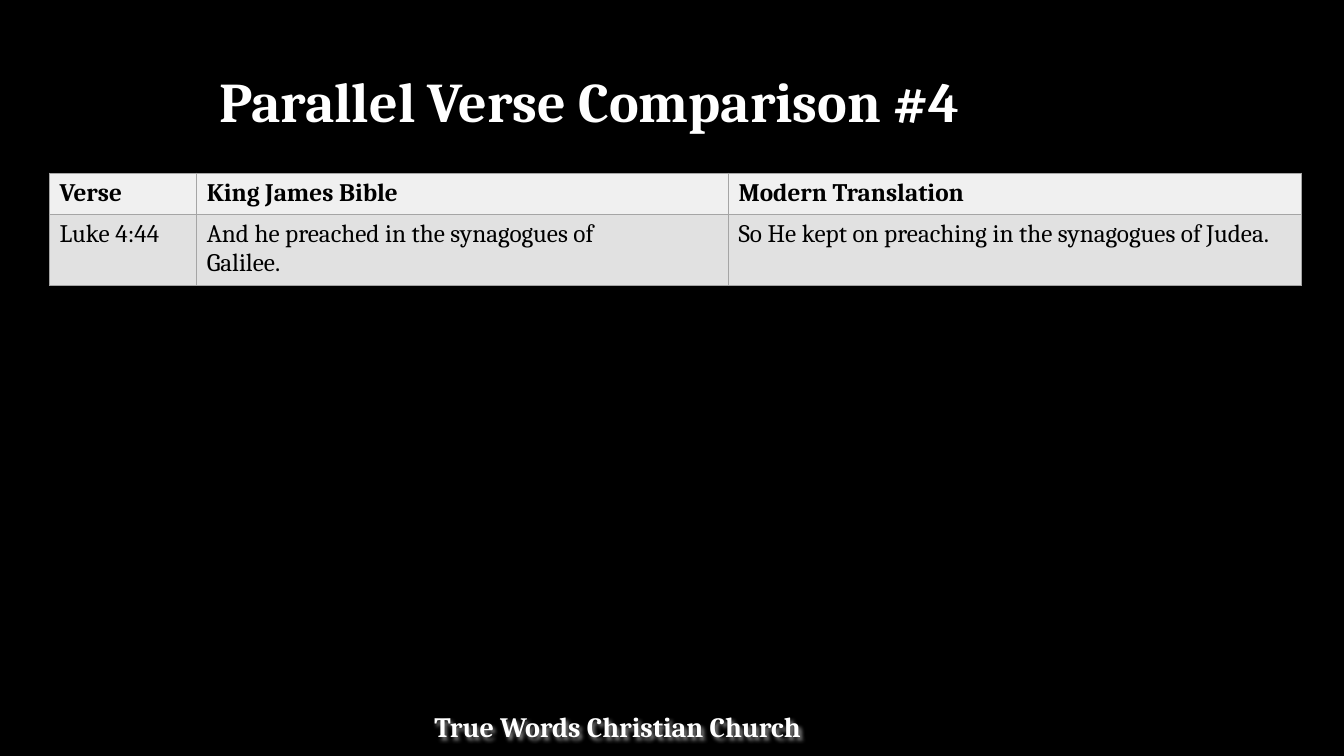
from lxml import etree
from pptx import Presentation
from pptx.dml.color import RGBColor
from pptx.oxml import parse_xml
from pptx.oxml.ns import nsdecls, qn
from pptx.util import Inches, Pt

FONT = "Cambria"
WIDTH, HEIGHT = Inches(13.33), Inches(7.5)
COLUMN_SHARES = (11.76, 42.47, 45.77)
ROW_SHARES = (37, 63)
ROW_FILLS = ("F0F0F0", "E1E1E1")
VERSES = (
    ("Verse", "King James Bible", "Modern Translation"),
    ("Luke 4:44", "And he preached in the synagogues of\nGalilee.",
     "So He kept on preaching in the synagogues of Judea."),
)


def color(hex_code):
    """Turn a hex string into a colour."""
    return RGBColor.from_string(hex_code)


def place(left, top, width, height):
    """Turn percentages of the slide into a box."""
    return (int(WIDTH * left / 100), int(HEIGHT * top / 100),
            int(WIDTH * width / 100), int(HEIGHT * height / 100))


def style(p, size, hex_code, bold):
    """Set the font of a paragraph."""
    font = p.font
    font.name, font.size, font.bold = FONT, Pt(size), bold
    font.color.rgb = color(hex_code)


def add_heading(s, box, text, size):
    """Add one line of bold white text."""
    sp = s.shapes.add_textbox(*box)
    tf = sp.text_frame
    tf.word_wrap = True
    tf.text = text
    style(tf.paragraphs[0], size, "FFFFFF", True)
    return sp


def add_footer(s, box, text):
    """Add the church name with a soft grey shadow."""
    sp = add_heading(s, box, text, 20)
    sp._element.spPr.append(parse_xml(
        f'<a:effectLst {nsdecls("a")}><a:outerShdw blurRad="38100" dist="25400" '
        'dir="2700000" algn="tl"><a:srgbClr val="808080"/></a:outerShdw></a:effectLst>'))


def add_borders(cell, hex_code):
    """Draw a thin line on all four sides of a cell."""
    tc_pr = cell._tc.get_or_add_tcPr()
    for side in "LRTB":
        ln = etree.SubElement(tc_pr, qn(f"a:ln{side}"), w=str(Pt(1)))
        fill = etree.SubElement(ln, qn("a:solidFill"))
        etree.SubElement(fill, qn("a:srgbClr"), val=hex_code)


def add_verse_table(s, box):
    """Add the table of verses, with a bold header row."""
    width, height = box[2:]
    table = s.shapes.add_table(len(VERSES), len(COLUMN_SHARES), *box).table
    for column, share in zip(table.columns, COLUMN_SHARES):
        column.width = int(width * share / 100)
    for i, (row, share) in enumerate(zip(table.rows, ROW_SHARES)):
        row.height = int(height * share / 100)
        for cell, text in zip(row.cells, VERSES[i]):
            cell.text = text
            add_borders(cell, "A5A5A5")
            cell.fill.solid()
            cell.fill.fore_color.rgb = color(ROW_FILLS[i])
            for p in cell.text_frame.paragraphs:
                style(p, 18, "000000", i == 0)


def add_comparison_slide(prs):
    """Add the black slide with its footer, table and title."""
    s = prs.slides.add_slide(prs.slide_layouts[6])
    s.background.fill.solid()
    s.background.fill.fore_color.rgb = color("000000")
    add_footer(s, place(31.58, 93.2, 33.68, 5.87), "True Words Christian Church")
    add_verse_table(s, place(3.68, 22.93, 93.17, 14.8))
    add_heading(s, place(15.6, 8.13, 66.32, 10.27), "Parallel Verse Comparison #4", 40)


def main():
    """Build and save the presentation."""
    prs = Presentation()
    prs.slide_width, prs.slide_height = WIDTH, HEIGHT
    add_comparison_slide(prs)
    prs.save("out.pptx")


if __name__ == "__main__":
    main()
